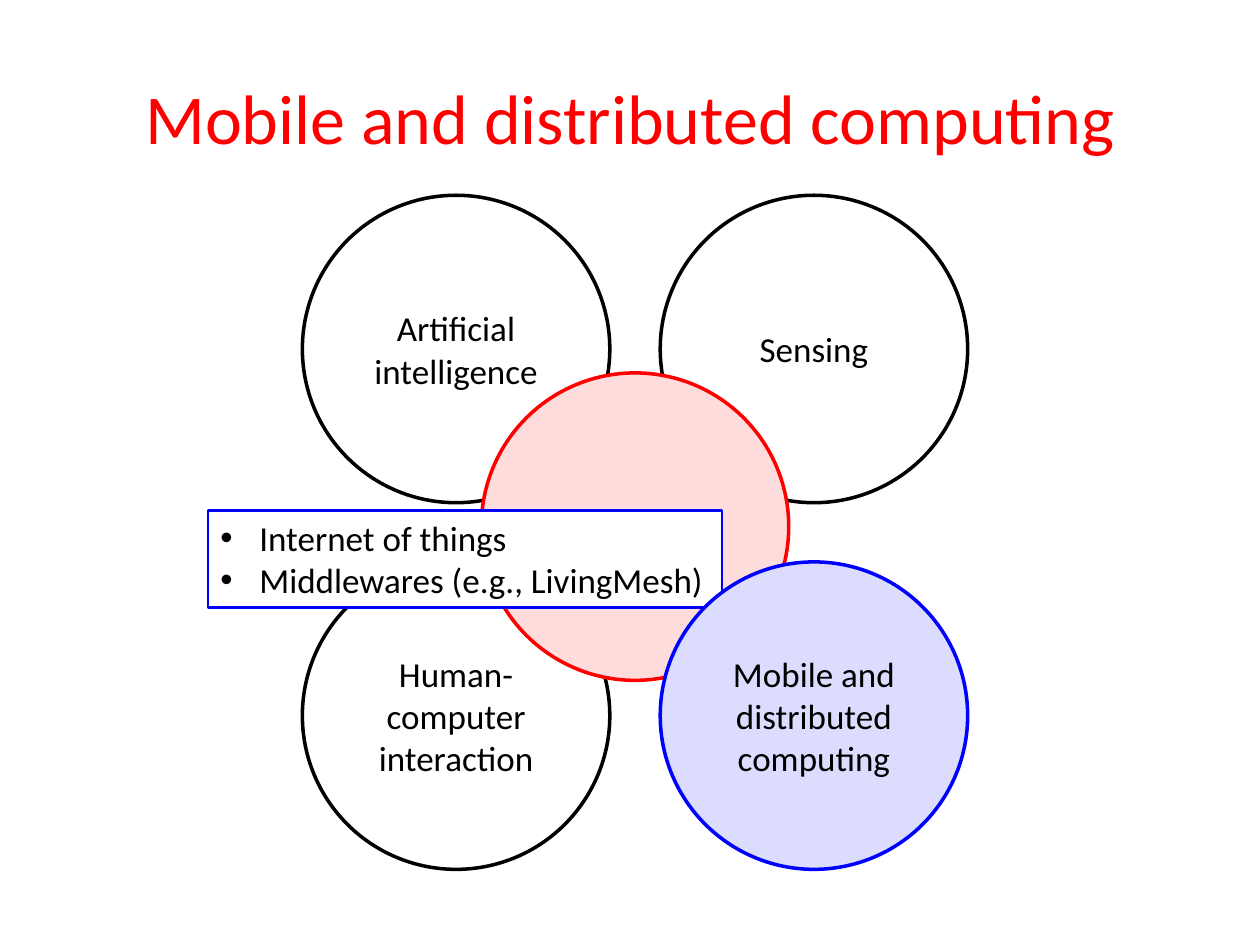
from pptx import Presentation
from pptx.dml.color import RGBColor
from pptx.enum.shapes import MSO_SHAPE as SHAPE
from pptx.enum.text import MSO_ANCHOR as ANCHOR, PP_ALIGN as ALIGN
from pptx.oxml import parse_xml
from pptx.oxml.ns import nsdecls
from pptx.util import Inches, Pt

BLACK, WHITE, RED, BLUE = "000000", "FFFFFF", "FF0000", "0000FF"


def rgb(value):
    return RGBColor.from_string(value)


def write(tf, lines, align, size, color=BLACK):
    for i, line in enumerate(lines):
        p = tf.paragraphs[0] if i == 0 else tf.add_paragraph()
        p.alignment = align
        r = p.add_run()
        r.text = line
        for name, value in {"name": "Calibri", "size": Pt(size)}.items():
            setattr(r.font, name, value)
        r.font.color.rgb = rgb(color)


prs = Presentation()
prs.slide_width, prs.slide_height = Inches(10), Inches(7.5)
s = prs.slides.add_slide(prs.slide_layouts[6])

# Grid of the four fields, with the shared circle in the middle
D = 2.44
LEFT, CENTER, RIGHT = 2.4, 3.82, 5.24
TOP, MIDDLE, BOTTOM = 1.55, 2.96, 4.46
BOX = (1.65, 4.05, 4.08, 0.77)
topics = ["Internet of things", "Middlewares (e.g., LivingMesh)"]

# Shapes from back to front: kind, place, fill, line, line width, lines
shapes = [
    (SHAPE.OVAL, (LEFT, BOTTOM, D, D), None, BLACK, 2, ["Human-computer interaction"]),
    (SHAPE.OVAL, (LEFT, TOP, D, D), None, BLACK, 2, ["Artificial intelligence"]),
    (SHAPE.OVAL, (RIGHT, TOP, D, D), None, BLACK, 2, ["Sensing"]),
    (SHAPE.OVAL, (CENTER, MIDDLE, D, D), "FFDCDC", RED, 2, []),
    (SHAPE.RECTANGLE, BOX, WHITE, BLUE, 1.5, topics),
    (SHAPE.OVAL, (RIGHT, BOTTOM, D, D), "DCDCFF", BLUE, 2,
     ["Mobile and distributed computing"]),
]
for kind, place, fill, line, width, lines in shapes:
    sp = s.shapes.add_shape(kind, *map(Inches, place))
    sp.shadow.inherit = False
    if fill:
        sp.fill.solid()
        sp.fill.fore_color.rgb = rgb(fill)
    else:
        sp.fill.background()
    sp.line.color.rgb = rgb(line)
    sp.line.width = Pt(width)
    is_list = kind == SHAPE.RECTANGLE
    tf = sp.text_frame
    tf.word_wrap = not is_list
    tf.vertical_anchor = ANCHOR.TOP if is_list else ANCHOR.MIDDLE
    write(tf, lines, ALIGN.LEFT if is_list else ALIGN.CENTER, 20)

    # Bullets with a hanging indent
    if is_list:
        for p in tf.paragraphs:
            pPr = p._p.get_or_add_pPr()
            pPr.set("marL", str(Inches(0.31)))
            pPr.set("indent", str(-Inches(0.31)))
            pPr.append(parse_xml(f'<a:buFont {nsdecls("a")} typeface="Arial"/>'))
            pPr.append(parse_xml(f'<a:buChar {nsdecls("a")} char="•"/>'))

# Title
tf = s.shapes.add_textbox(*map(Inches, (0.5, 0.3, 9, 1.25))).text_frame
tf.word_wrap = True
tf.vertical_anchor = ANCHOR.MIDDLE
write(tf, ["Mobile and distributed computing"], ALIGN.CENTER, 40, RED)

prs.save("out.pptx")
